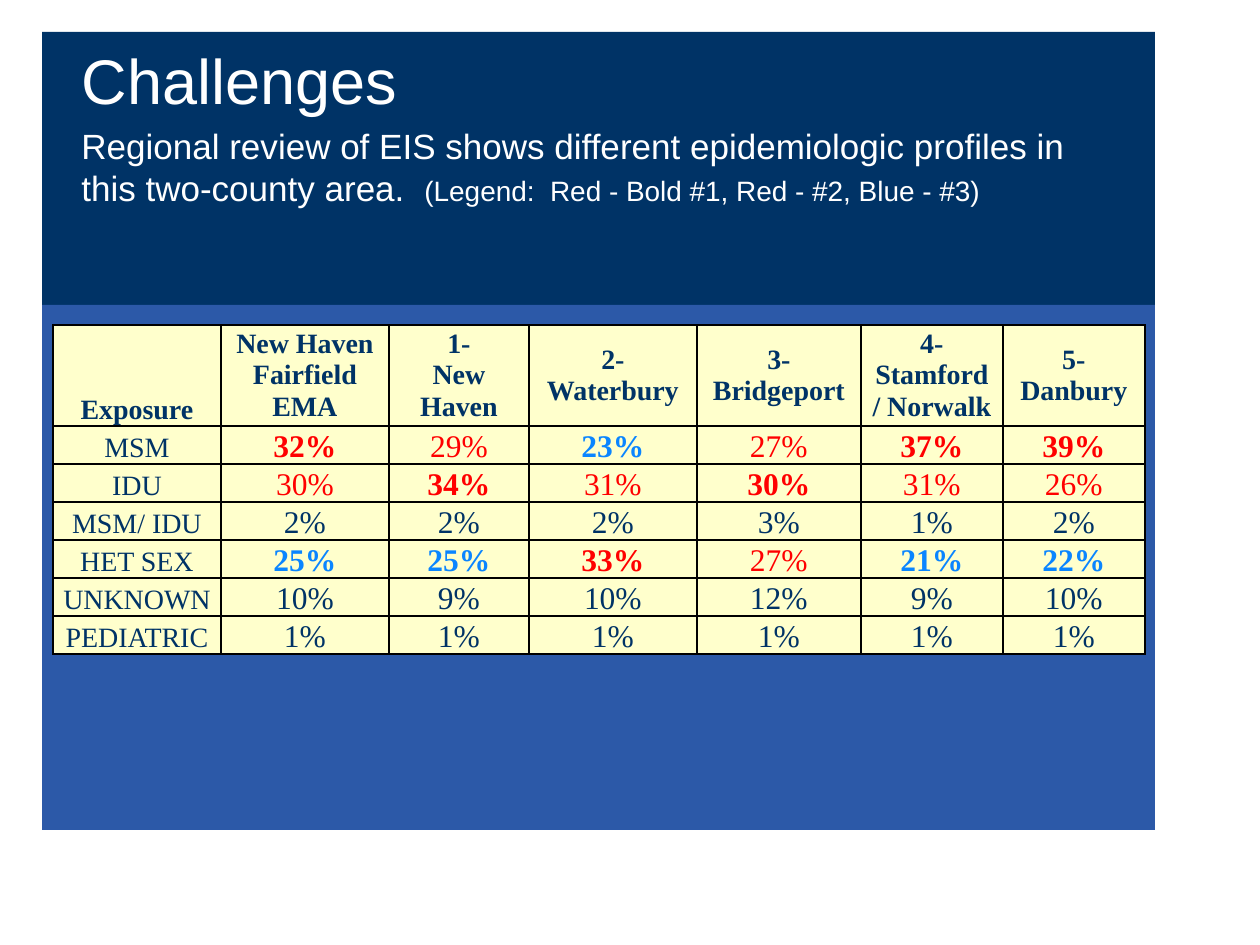
from lxml import etree
from pptx import Presentation
from pptx.dml.color import RGBColor
from pptx.enum.shapes import MSO_SHAPE
from pptx.enum.text import MSO_ANCHOR, MSO_AUTO_SIZE, PP_ALIGN
from pptx.oxml.ns import qn
from pptx.util import Emu, Pt

RECTANGLE = MSO_SHAPE.RECTANGLE
TOP, MIDDLE, BOTTOM = MSO_ANCHOR.TOP, MSO_ANCHOR.MIDDLE, MSO_ANCHOR.BOTTOM
LEFT, CENTER = PP_ALIGN.LEFT, PP_ALIGN.CENTER
GROW = MSO_AUTO_SIZE.SHAPE_TO_FIT_TEXT
NO_RESIZE = MSO_AUTO_SIZE.NONE

PX_PER_INCH = 126
NAVY, BLUE, CREAM, WHITE, BLACK = "003366", "2C59A8", "FFFFCC", "FFFFFF", "000000"
SANS, SERIF = "Arial", "Times New Roman"
RANK_STYLES = {1: ("FF0000", True), 2: ("FF0000", False), 3: ("0A85FF", True)}

HEADINGS = ["Exposure", "New Haven Fairfield\nEMA", "1-\nNew Haven", "2-Waterbury",
            "3-Bridgeport", "4-Stamford / Norwalk", "5-Danbury"]
SHARES = {
    "MSM": [32, 29, 23, 27, 37, 39],
    "IDU": [30, 34, 31, 30, 31, 26],
    "MSM/ IDU": [2, 2, 2, 3, 1, 2],
    "HET SEX": [25, 25, 33, 27, 21, 22],
    "UNKNOWN": [10, 9, 10, 12, 9, 10],
    "PEDIATRIC": [1, 1, 1, 1, 1, 1],
}
COLUMN_WIDTHS = [168, 168, 140, 168, 164, 142, 142]
HEADING_HEIGHT, ROW_HEIGHT = 101, 38


def px(length):
    """Turn a pixel length into EMU."""
    return Emu(round(length * 914400 / PX_PER_INCH))


def color(hex_code):
    """Turn a hex string into a colour."""
    return RGBColor.from_string(hex_code)


def add_run(paragraph, text, size, font, hex_code, bold=False):
    """Add one formatted run to a paragraph."""
    run = paragraph.add_run()
    run.text = text
    run.font.size = Pt(size)
    run.font.name = font
    run.font.bold = bold
    run.font.color.rgb = color(hex_code)


def add_panel(slide, x, y, width, height, fill):
    """Add a plain filled rectangle."""
    panel = slide.shapes.add_shape(RECTANGLE, px(x), px(y), px(width), px(height))
    panel.shadow.inherit = False
    panel.fill.solid()
    panel.fill.fore_color.rgb = color(fill)
    panel.line.fill.background()
    return panel


def build_backdrop(slide, x, y, width, height):
    """Place the navy header and blue body behind the title."""
    header_height = 273
    header = add_panel(slide, x, y, width, height, NAVY)
    body = add_panel(slide, x, y + header_height, width, height - header_height, BLUE)
    for panel in (header, body):
        slide.shapes.title.element.addprevious(panel.element)


def build_heading(slide, x, y, width):
    """Place the title and the summary with its legend."""
    title = slide.shapes.title
    title.left, title.top, title.width, title.height = px(x), px(y), px(width), px(154)
    title.text_frame.vertical_anchor = TOP
    title.text_frame.word_wrap = True
    title.text_frame.auto_size = NO_RESIZE
    heading = title.text_frame.paragraphs[0]
    heading.alignment = LEFT
    add_run(heading, "Challenges", 36, SANS, WHITE)

    summary = slide.shapes.add_textbox(px(x), px(y + 83), px(width), px(97)).text_frame
    summary.word_wrap = True
    summary.auto_size = GROW
    sentence = summary.paragraphs[0]
    add_run(sentence, "Regional review of EIS shows different epidemiologic profiles in "
            "this two-county area.  ", 20, SANS, WHITE)
    add_run(sentence, "(Legend:  Red - Bold #1, Red - #2, Blue - #3)", 16, SANS, WHITE)


def add_borders(cell):
    """Draw a thin black line on every side of a cell."""
    properties = cell._tc.get_or_add_tcPr()
    for position, side in enumerate(("a:lnL", "a:lnR", "a:lnT", "a:lnB")):
        line = etree.Element(qn(side), w=str(Pt(1)))
        fill = etree.SubElement(line, qn("a:solidFill"))
        etree.SubElement(fill, qn("a:srgbClr"), val=BLACK)
        properties.insert(position, line)


def fill_cell(cell, text, size, hex_code, bold, anchor):
    """Write centred text in a bordered cream cell."""
    cell.fill.solid()
    cell.fill.fore_color.rgb = color(CREAM)
    cell.vertical_anchor = anchor
    cell.margin_left = cell.margin_right = px(9)
    cell.margin_top = cell.margin_bottom = 0
    add_borders(cell)
    paragraph = cell.text_frame.paragraphs[0]
    paragraph.alignment = CENTER
    for index, line in enumerate(text.split("\n")):
        if index:
            paragraph.add_line_break()
        add_run(paragraph, line, size, SERIF, hex_code, bold)


def rank_style(share, region_shares):
    """Return colour and weight for a share's rank in its region."""
    rank = 1 + sum(other > share for other in region_shares)
    return RANK_STYLES.get(rank, (NAVY, False))


def build_exposure_table(slide, x, y):
    """Place the table of exposure shares by region."""
    height = HEADING_HEIGHT + ROW_HEIGHT * len(SHARES)
    table = slide.shapes.add_table(len(SHARES) + 1, len(HEADINGS), px(x), px(y),
                                   px(sum(COLUMN_WIDTHS)), px(height)).table
    for column, width in zip(table.columns, COLUMN_WIDTHS):
        column.width = px(width)
    for index, row in enumerate(table.rows):
        row.height = px(ROW_HEIGHT if index else HEADING_HEIGHT)
    for index, heading in enumerate(HEADINGS):
        fill_cell(table.cell(0, index), heading, 16, NAVY, True, MIDDLE if index else BOTTOM)

    regions = list(zip(*SHARES.values()))
    for row, (exposure, shares) in enumerate(SHARES.items(), 1):
        fill_cell(table.cell(row, 0), exposure, 16, NAVY, False, BOTTOM)
        for column, (share, region) in enumerate(zip(shares, regions), 1):
            hex_code, bold = rank_style(share, region)
            fill_cell(table.cell(row, column), f"{share}%", 18, hex_code, bold, BOTTOM)


def main():
    """Build the slide and save it."""
    deck = Presentation()
    deck.slide_width, deck.slide_height = px(1260), px(945)
    slide = deck.slides.add_slide(deck.slide_layouts[5])
    build_backdrop(slide, 42, 32, 1113, 798)
    build_heading(slide, 69, 35, 1033)
    build_exposure_table(slide, 53, 325)
    deck.save("out.pptx")


if __name__ == "__main__":
    main()
